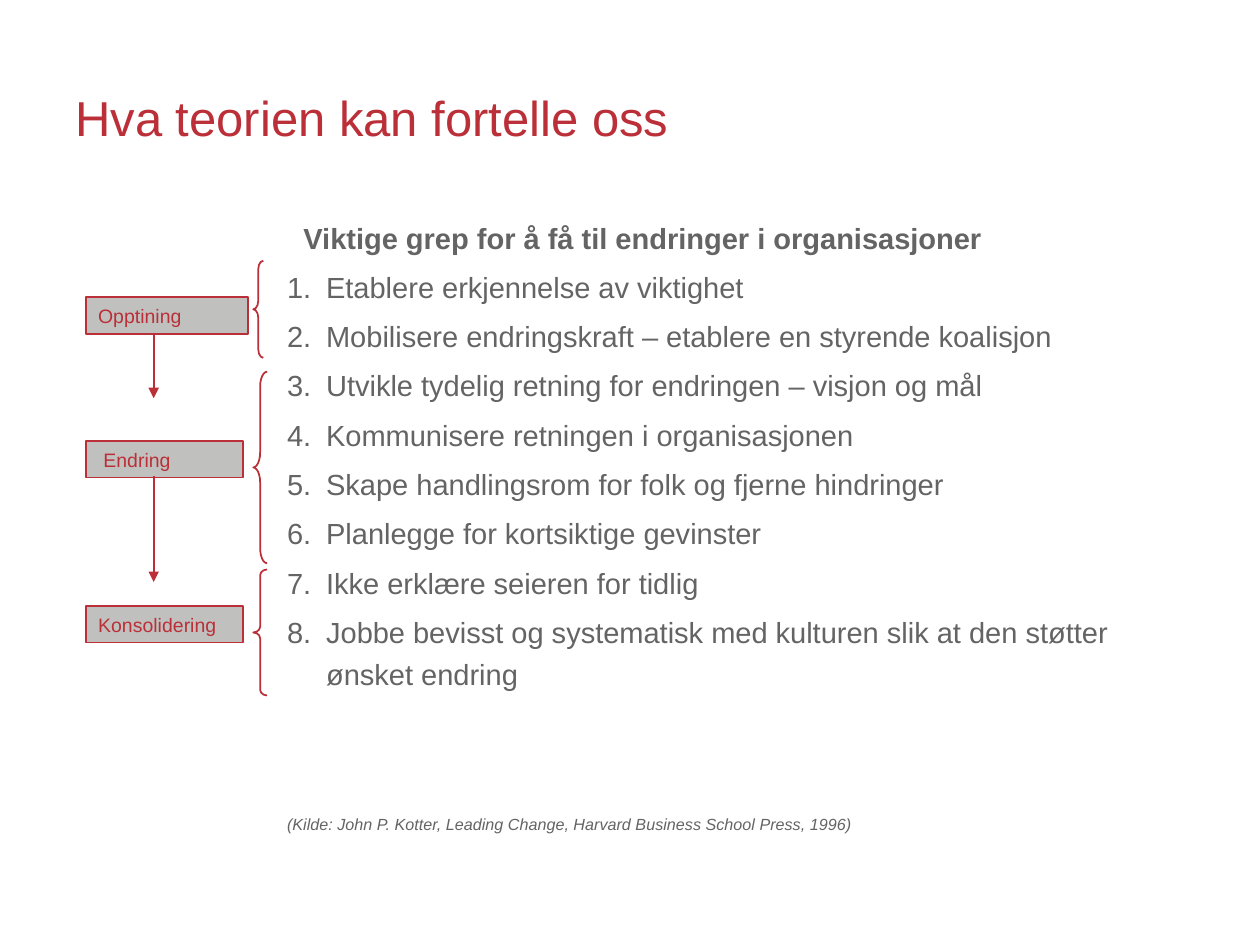
from lxml.etree import SubElement
from pptx import Presentation
from pptx.dml.color import RGBColor
from pptx.enum.shapes import MSO_CONNECTOR, MSO_SHAPE
from pptx.enum.text import MSO_ANCHOR, PP_ALIGN
from pptx.oxml.ns import qn
from pptx.util import Inches, Pt

COLORS = {"red": "BB2F38", "gray": "636463", "box": "C0C1BF"}
FONT = "Arial"
STEPS = [
    "Etablere erkjennelse av viktighet",
    "Mobilisere endringskraft – etablere en styrende koalisjon",
    "Utvikle tydelig retning for endringen – visjon og mål",
    "Kommunisere retningen i organisasjonen",
    "Skape handlingsrom for folk og fjerne hindringer",
    "Planlegge for kortsiktige gevinster",
    "Ikke erklære seieren for tidlig",
    "Jobbe bevisst og systematisk med kulturen slik at den støtter ønsket endring",
]
PHASES = [
    ("Opptining", 0.29, 1.29, 0.1, (0, 0.08, 0.77, 0.83)),
    ("Endring", 1.43, 1.25, 0.14, (0.88, 0.11, 1.52, 1.08)),
    ("Konsolidering", 2.74, 1.25, 0.1, (2.45, 0.11, 1, 0.42)),
]
ARROWS = [(0.58, 1.09), (1.71, 2.55)]


def color(name):
    return RGBColor.from_string(COLORS[name])


def add_run(paragraph, text, size, color_name, bold=False, italic=False):
    run = paragraph.add_run()
    run.text = text
    run.font.name = FONT
    run.font.size = Pt(size)
    run.font.bold = bold
    run.font.italic = italic
    run.font.color.rgb = color(color_name)


def add_text_box(slide, left, top, width, height, anchor):
    shape = slide.shapes.add_textbox(Inches(left), Inches(top), Inches(width), Inches(height))
    frame = shape.text_frame
    frame.word_wrap = True
    frame.vertical_anchor = anchor
    return frame


def set_indent(paragraph, first_line, numbered=False):
    properties = paragraph._p.get_or_add_pPr()
    properties.set("marL", str(Inches(1.99)))
    properties.set("indent", str(Inches(first_line)))
    if numbered:
        SubElement(properties, qn("a:buFont"), typeface=FONT)
        SubElement(properties, qn("a:buAutoNum"), type="arabicPeriod")


def add_title(slide, left, top, width, height):
    frame = add_text_box(slide, left, top, width, height, MSO_ANCHOR.MIDDLE)
    add_run(frame.paragraphs[0], "Hva teorien kan fortelle oss", 28, "red")


def add_body(slide, left, top, width, height):
    frame = add_text_box(slide, left, top, width, height, MSO_ANCHOR.TOP)
    heading = frame.paragraphs[0]
    set_indent(heading, -0.18)
    heading.line_spacing = 0.8
    add_run(heading, "Viktige grep for å få til endringer i organisasjoner", 16.6, "gray", bold=True)
    for step in STEPS:
        paragraph = frame.add_paragraph()
        paragraph.level = 1
        set_indent(paragraph, -0.31, numbered=True)
        paragraph.line_spacing = 1.2
        paragraph.space_before = Pt(4.3)
        add_run(paragraph, step, 16.6, "gray")
    source = frame.add_paragraph()
    source.level = 1
    set_indent(source, -0.31)
    source.line_spacing = 1.2
    source.space_before = Pt(68)
    add_run(source, "(Kilde: John P. Kotter, Leading Change, Harvard Business School Press, 1996)",
            9.2, "gray", italic=True)


def add_outlined_shape(slide, kind, left, top, width, height):
    shape = slide.shapes.add_shape(kind, Inches(left), Inches(top), Inches(width), Inches(height))
    shape.shadow.inherit = False
    shape.line.color.rgb = color("red")
    shape.line.width = Pt(1)
    return shape


def add_brace(slide, left, top, width, height, curve):
    brace = add_outlined_shape(slide, MSO_SHAPE.LEFT_BRACE, left, top, width, height)
    brace.fill.background()
    brace.adjustments[0] = curve
    brace.adjustments[1] = 0.5


def add_phase(slide, left, top, width, height, label, inset):
    box = add_outlined_shape(slide, MSO_SHAPE.RECTANGLE, left, top, width, height)
    box.fill.solid()
    box.fill.fore_color.rgb = color("box")
    frame = box.text_frame
    frame.margin_left = Inches(inset)
    frame.vertical_anchor = MSO_ANCHOR.MIDDLE
    paragraph = frame.paragraphs[0]
    paragraph.alignment = PP_ALIGN.LEFT
    add_run(paragraph, label, 11.1, "red")


def add_arrow(slide, x, start, end):
    arrow = slide.shapes.add_connector(
        MSO_CONNECTOR.STRAIGHT, Inches(x), Inches(start), Inches(x), Inches(end))
    arrow.line.color.rgb = color("red")
    arrow.line.width = Pt(1)
    SubElement(arrow.line._get_or_add_ln(), qn("a:tailEnd"), type="triangle")
    SubElement(arrow._element.spPr, qn("a:effectLst"))


def add_phases(slide, left, top):
    for label, offset, width, inset, (brace_offset, brace_width, brace_height, curve) in PHASES:
        add_brace(slide, left + 1.33, top + brace_offset, brace_width, brace_height, curve)
        add_phase(slide, left, top + offset, width, 0.29, label, inset)
    for start, end in ARROWS:
        add_arrow(slide, left + 0.54, top + start, top + end)


def main():
    presentation = Presentation()
    presentation.slide_width = Inches(10)
    presentation.slide_height = Inches(7.5)
    slide = presentation.slides.add_slide(presentation.slide_layouts[6])
    add_title(slide, 0.5, 0.3, 9, 1.25)
    add_body(slide, 0.5, 1.75, 9, 4.99)
    add_phases(slide, 0.68, 2.07)
    presentation.save("out.pptx")


if __name__ == "__main__":
    main()
